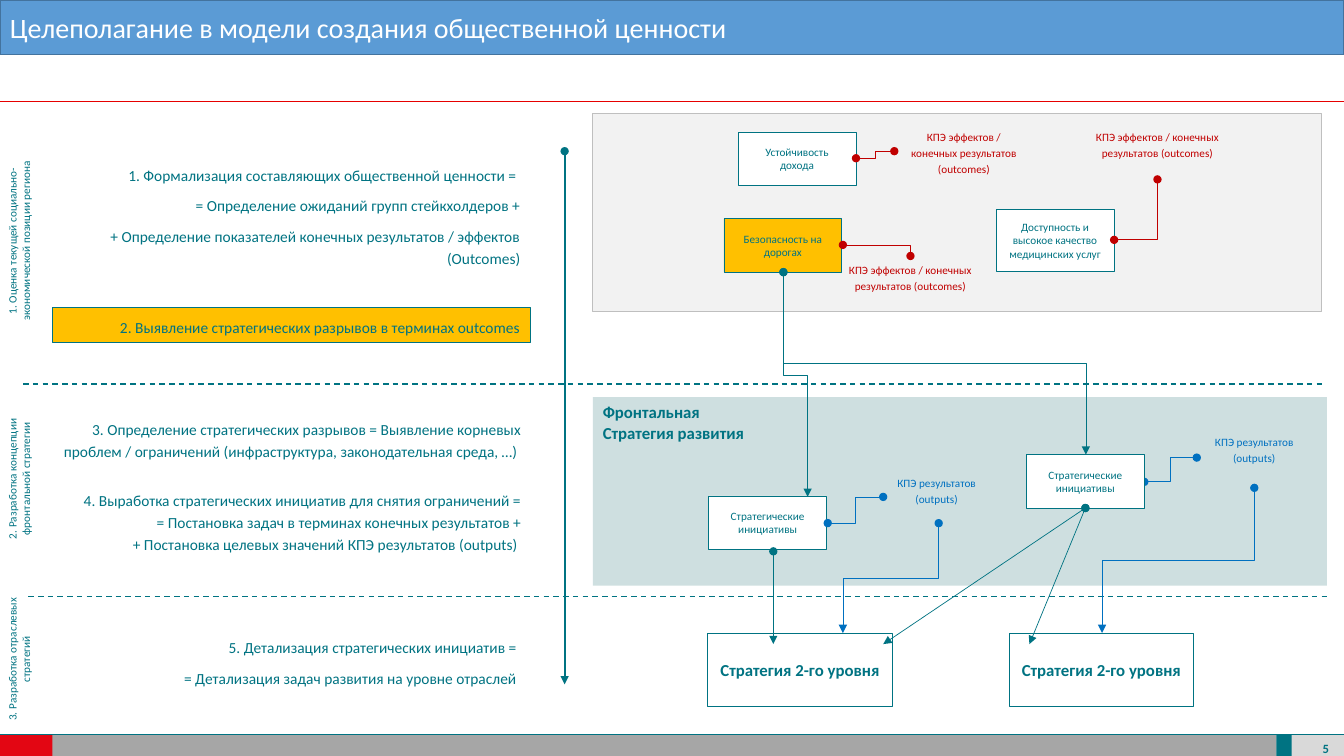
from dataclasses import dataclass
from typing import NamedTuple, Optional

from lxml import etree
from pptx import Presentation
from pptx.dml import color as colour
from pptx.enum import dml, shapes, text
from pptx.oxml import ns
from pptx.util import Inches, Pt


@dataclass(frozen=True)
class Theme:
    font: str = "Calibri"
    teal: str = "007382"
    white: str = "FFFFFF"
    gold: str = "FFC000"
    red: str = "C00000"
    blue: str = "0070C0"
    header: str = "5B9BD5"
    header_edge: str = "43739E"
    rule: str = "E60000"
    pale: str = "F2F2F2"
    pale_edge: str = "BFBFBF"
    mint: str = "CEDFE0"
    footer: str = "A6A6A6"
    footer_end: str = "D9D9D9"
    footer_red: str = "E30613"
    title: int = 20
    heading: int = 12
    step: int = 11
    page_number: int = 9
    label: int = 8


THEME = Theme()
LEFT, CENTER, RIGHT = text.PP_ALIGN.LEFT, text.PP_ALIGN.CENTER, text.PP_ALIGN.RIGHT


class Area(NamedTuple):
    left: float
    top: float
    width: float
    height: float


class Point(NamedTuple):
    x: float
    y: float


@dataclass(frozen=True)
class Style:
    size: int = THEME.label
    color: str = THEME.teal
    bold: bool = False
    align: text.PP_ALIGN = CENTER
    spaced: bool = False
    top: bool = False
    insets: tuple[float, float, float, float] = (0.1, 0.05, 0.1, 0.05)
    gap: float = 6


@dataclass(frozen=True)
class Box:
    area: Area
    words: str = ""
    fill: Optional[str] = None
    edge: Optional[str] = None
    style: Style = Style()
    edge_width: float = 0.5
    rotation: int = 0


@dataclass(frozen=True)
class Link:
    start: Point
    end: Point
    color: str = THEME.teal
    width: float = 0.5
    head: str = "oval"
    tail: str = "triangle"
    route: str = "straight"  # straight, across, down or corner
    bend: float = 0.5
    dashed: bool = False


def draw_box(page, item: Box):
    area = [Inches(value) for value in item.area]
    if item.fill:
        box = page.shapes.add_shape(shapes.MSO_SHAPE.RECTANGLE, *area)
        box.shadow.inherit = False
        box.fill.solid()
        box.fill.fore_color.rgb = colour.RGBColor.from_string(item.fill)
        if item.edge:
            box.line.color.rgb = colour.RGBColor.from_string(item.edge)
            box.line.width = Pt(item.edge_width)
        else:
            box.line.fill.background()
    else:
        box = page.shapes.add_textbox(*area)
    box.rotation = item.rotation
    if item.words:
        write(box.text_frame, item.words, item.style)
    return box


def write(frame, words: str, style: Style) -> None:
    frame.word_wrap = True
    frame.vertical_anchor = text.MSO_ANCHOR.TOP if style.top else text.MSO_ANCHOR.MIDDLE
    frame.margin_left, frame.margin_top, frame.margin_right, frame.margin_bottom = (
        Inches(value) for value in style.insets)
    frame.text = words
    for para in frame.paragraphs:
        para.alignment = style.align
        if style.spaced:
            para.line_spacing = 1.2
            para.space_after = Pt(style.gap)
        for span in para.runs:
            span.font.name = THEME.font
            span.font.size = Pt(style.size)
            span.font.bold = style.bold
            span.font.color.rgb = colour.RGBColor.from_string(style.color)


def draw_link(page, link: Link):
    (x1, y1), (x2, y2) = link.start, link.end
    turned = link.route in ("down", "corner")
    kind = shapes.MSO_CONNECTOR.STRAIGHT if link.route == "straight" else shapes.MSO_CONNECTOR.ELBOW
    if turned:  # lay the route on its side, then rotate it about its centre
        cx, cy = (x1 + x2) / 2, (y1 + y2) / 2
        half_w, half_h = abs(y2 - y1) / 2, abs(x2 - x1) / 2
        ends = (cx - half_w, cy - half_h, cx + half_w, cy + half_h)
    else:
        ends = (x1, y1, x2, y2)
    line = page.shapes.add_connector(kind, *(Inches(value) for value in ends))
    properties = line._element.spPr
    geometry = properties.find(ns.qn("a:prstGeom"))
    if turned:
        downward = y2 > y1
        frame = properties.find(ns.qn("a:xfrm"))
        frame.set("rot", str((90 if downward else 270) * 60000))
        if (x2 > x1) == downward:
            frame.set("flipV", "1")
    if link.route == "corner":
        geometry.set("prst", "bentConnector2")
    elif link.bend != 0.5:
        guides = geometry.find(ns.qn("a:avLst"))
        etree.SubElement(guides, ns.qn("a:gd"), name="adj1", fmla=f"val {round(link.bend * 100000)}")
    line.line.color.rgb = colour.RGBColor.from_string(link.color)
    line.line.width = Pt(link.width)
    if link.dashed:
        line.line.dash_style = dml.MSO_LINE.DASH
    outline = properties.find(ns.qn("a:ln"))
    etree.SubElement(outline, ns.qn("a:headEnd"), type=link.head)
    etree.SubElement(outline, ns.qn("a:tailEnd"), type=link.tail)
    etree.SubElement(properties, ns.qn("a:effectLst"))
    return line


def rule(x1: float, x2: float, y: float, color: str = THEME.teal, dashed: bool = False) -> Link:
    return Link(Point(x1, y), Point(x2, y), color, 1 if dashed else 0.5, "none", "none", dashed=dashed)


def card(left: float, top: float, words: str, fill: str = THEME.white, height: float = 0.53) -> Box:
    return Box(Area(left, top, 1.17, height), words, fill, THEME.teal)


def metric(left: float, top: float, width: float, words: str, color: str) -> Box:
    return Box(Area(left, top, width, 0.56), words, style=Style(color=color, spaced=True, top=True))


def stage(center_y: float, length: float, words: str) -> Box:
    return Box(Area(0.19 - length / 2, center_y - 0.185, length, 0.37), words, rotation=270, style=Style(top=True))


STEP = Style(THEME.step, align=RIGHT, spaced=True)
STEP_ONE = Style(THEME.step, align=RIGHT, spaced=True, insets=(0.1, 0.05, 0.1, 0.36))
STEP_WIDE = Style(THEME.step, align=RIGHT, spaced=True, gap=19)
HEADING = Style(THEME.heading, bold=True)
PANEL_HEADING = Style(THEME.heading, bold=True, align=LEFT, top=True)
PAGE_NUMBER = Style(THEME.page_number, bold=True, align=RIGHT, spaced=True, top=True, insets=(0.12, 0, 0.16, 0))
OUTCOMES = "КПЭ эффектов / конечных результатов (outcomes)"
OUTPUTS = "КПЭ результатов (outputs)"
INITIATIVES = "Стратегические инициативы"

BACKDROP = [
    # Header and footer
    Box(Area(0, 0, 13.33, 0.54), "Целеполагание в модели создания общественной ценности", THEME.header,
        THEME.header_edge, Style(THEME.title, THEME.white, align=LEFT), 1),
    Box(Area(0, 7.29, 12.67, 0.21), fill=THEME.footer),
    Box(Area(12.66, 7.29, 0.67, 0.21), fill=THEME.footer_end),
    Box(Area(12.76, 7.32, 0.58, 0.16), "5", style=PAGE_NUMBER),
    Box(Area(12.66, 7.29, 0.15, 0.21), fill=THEME.teal),
    Box(Area(0, 7.29, 0.52, 0.21), fill=THEME.footer_red),
    # Panels
    Box(Area(5.88, 1.13, 7.23, 1.96), fill=THEME.pale, edge=THEME.pale_edge),
    Box(Area(5.88, 3.94, 7.28, 1.87), "Фронтальная\vСтратегия развития", THEME.mint, style=PANEL_HEADING),
    # Steps
    Box(Area(0.52, 1.09, 4.74, 2.39), "1. Формализация составляющих общественной ценности = \n"
        "= Определение ожиданий групп стейкхолдеров +\n"
        "+ Определение показателей конечных результатов / эффектов (Outcomes)", THEME.white, style=STEP_ONE),
    Box(Area(0.52, 3.05, 4.74, 0.35), "2. Выявление стратегических разрывов в терминах outcomes",
        THEME.gold, THEME.teal, STEP),
    Box(Area(0.42, 3.87, 4.85, 1.88), "3. Определение стратегических разрывов = Выявление корневых проблем / "
        "ограничений (инфраструктура, законодательная среда, …) \n"
        "4. Выработка стратегических инициатив для снятия ограничений =\v"
        "= Постановка задач в терминах конечных результатов +\v"
        "+ Постановка целевых значений КПЭ результатов (outputs) ", THEME.white, style=STEP_WIDE),
    Box(Area(0.52, 5.93, 4.74, 1.25), "5. Детализация стратегических инициатив = \n"
        "= Детализация задач развития на уровне отраслей ", THEME.white, style=STEP),
    # Stage names
    stage(2.39, 2.22, "1. Оценка текущей социально-экономической позиции региона"),
    stage(4.75, 1.98, "2. Разработка концепции фронтальной стратегии"),
    stage(6.54, 1.67, "3. Разработка отраслевых стратегий"),
    # Goals and strategies
    card(7.32, 1.31, "Устойчивость дохода"),
    card(9.88, 2.08, "Доступность и высокое качество медицинских услуг", height=0.61),
    card(7.18, 2.17, "Безопасность на дорогах", THEME.gold),
    card(7.03, 4.92, INITIATIVES),
    *(Box(Area(left, 6.28, 1.83, 0.73), "Стратегия 2-го уровня", THEME.white, THEME.teal, HEADING)
      for left in (7.02, 10.01)),
    # Metrics
    metric(8.87, 1.22, 1.38, OUTCOMES, THEME.red),
    metric(10.76, 1.22, 1.44, OUTCOMES, THEME.red),
    metric(8.31, 2.54, 1.44, OUTCOMES, THEME.red),
    metric(11.87, 4.24, 1.14, OUTPUTS, THEME.blue),
    metric(8.72, 4.65, 1.14, OUTPUTS, THEME.blue),
]

LINKS = [
    # Rules and timeline
    rule(0, 13.33, 1.01, THEME.rule),
    rule(0, 13.33, 7.29),
    rule(0.23, 13.11, 3.81, dashed=True),
    rule(0.28, 13.16, 5.92, dashed=True),
    Link(Point(5.6, 1.5), Point(5.6, 6.79), width=1.5),
    # Metrics to goals and initiatives
    Link(Point(11.48, 1.78), Point(11.05, 2.38), THEME.red, tail="oval", route="corner"),
    Link(Point(9.03, 2.54), Point(8.36, 2.43), THEME.red, tail="oval", route="corner"),
    Link(Point(8.87, 1.5), Point(8.49, 1.57), THEME.red, tail="oval", route="across"),
    Link(Point(11.87, 4.54), Point(11.35, 4.78), THEME.blue, tail="oval", route="across"),
    Link(Point(8.76, 4.93), Point(8.21, 5.19), THEME.blue, tail="oval", route="across"),
    # Down to the next level
    Link(Point(7.77, 2.7), Point(10.77, 4.51), route="down"),
    Link(Point(7.77, 2.7), Point(8.01, 4.93), route="down", bend=0.459),
    Link(Point(12.44, 4.84), Point(10.93, 6.28), THEME.blue, route="down"),
    Link(Point(9.31, 5.19), Point(8.36, 6.28), THEME.blue, route="down"),
    Link(Point(7.67, 5.47), Point(7.67, 6.39)),
]


def main() -> None:
    deck = Presentation()
    deck.slide_width, deck.slide_height = Inches(13.33), Inches(7.5)
    page = deck.slides.add_slide(deck.slide_layouts[6])
    for item in BACKDROP:
        draw_box(page, item)
    for link in LINKS:
        draw_link(page, link)
    # Shared initiatives feed both second-level strategies
    initiatives = draw_box(page, card(10.18, 4.51, INITIATIVES))
    for x in (10.21, 8.76):
        draw_link(page, Link(Point(10.77, 5.04), Point(x, 6.39))).begin_connect(initiatives, 2)
    deck.save("out.pptx")


if __name__ == "__main__":
    main()
